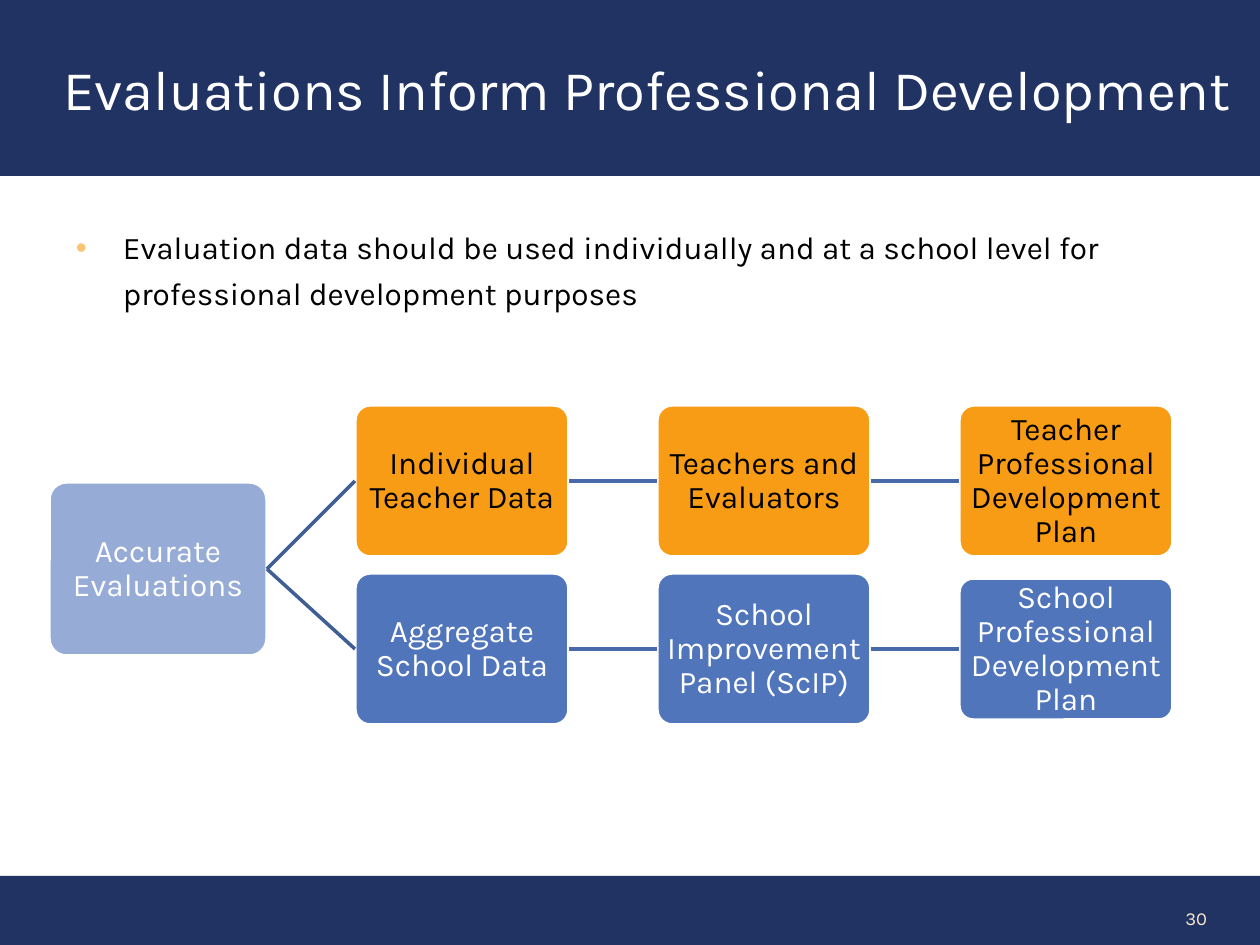
from lxml.etree import SubElement
from pptx import Presentation
from pptx.dml.color import RGBColor
from pptx.enum.shapes import MSO_CONNECTOR, MSO_SHAPE
from pptx.enum.text import MSO_ANCHOR, MSO_AUTO_SIZE, PP_ALIGN
from pptx.oxml.ns import qn
from pptx.util import Emu, Pt

TITLE = "Evaluations Inform Professional Development"
POINT = ("Evaluation data should be used individually and at a school level "
         "for professional development purposes")
PAGE = "30"
ROOT = "Accurate Evaluations"
# fill, text colour, top, labels
ROWS = [
    ("F89C15", "000000", 405, ["Individual Teacher Data", "Teachers and Evaluators",
                               "Teacher Professional Development Plan"]),
    ("5075BB", "FFFFFF", 573, ["Aggregate School Data",
                               "School Improvement Panel (ScIP)",
                               "School Professional Development Plan"]),
]
SHORT = "School Professional Development Plan"  # this box is less tall

NAVY, WHITE = "213363", "FFFFFF"
LEFT, STEP, WIDE, HIGH = 355, 302, 214, 152


def px(n):
    return Emu(round(n * 914400 / 126))


def rgb(code):
    return RGBColor.from_string(code)


def paint(shape, fill, line=None):
    shape.shadow.inherit = False
    shape.fill.solid()
    shape.fill.fore_color.rgb = rgb(fill)
    if line:
        shape.line.color.rgb = rgb(line)
        shape.line.width = Pt(2)
    else:
        shape.line.fill.background()


def write(shape, text, size, color, align, space=1.0, pad=None, bullet=None):
    """Fill a shape with one paragraph; pad is left, top, right, bottom in px."""
    frame = shape.text_frame
    look = {"word_wrap": True, "auto_size": MSO_AUTO_SIZE.NONE,
            "vertical_anchor": MSO_ANCHOR.MIDDLE}
    sides = ("margin_left", "margin_top", "margin_right", "margin_bottom")
    look.update(zip(sides, map(px, pad or (13, 6, 13, 6))))
    for key, val in look.items():
        setattr(frame, key, val)
    frame.text = text
    para = frame.paragraphs[0]
    para.alignment, para.line_spacing = align, space
    if bullet:
        props = para._p.get_or_add_pPr()
        props.set("marL", str(px(47)))
        props.set("indent", str(-px(47)))
        SubElement(SubElement(props, qn("a:buClr")), qn("a:srgbClr"), val=bullet)
        SubElement(props, qn("a:buFont"), typeface="Arial")
        SubElement(props, qn("a:buChar"), char="•")
    font = para.runs[0].font
    for key, val in {"name": "Karla", "size": Pt(size), "bold": False}.items():
        setattr(font, key, val)
    font.color.rgb = rgb(color)


def add_box(shapes, text, spot, fill, color):
    box = shapes.add_shape(MSO_SHAPE.ROUNDED_RECTANGLE, *map(px, spot))
    box.adjustments[0] = 0.1
    paint(box, fill, WHITE)
    write(box, text, 18, color, PP_ALIGN.CENTER, 0.9, (1, 1, 1, 1))
    return box


def join(shapes, start, end, color):
    line = shapes.add_connector(MSO_CONNECTOR.STRAIGHT, 0, 0, 0, 0)
    line.begin_connect(start, 3)
    line.end_connect(end, 1)
    line.line.color.rgb = rgb(color)
    line.line.width = Pt(2)
    SubElement(line._element.spPr, qn("a:effectLst"))


def main():
    deck = Presentation()
    deck.slide_width, deck.slide_height = px(1260), px(945)
    shapes = deck.slides.add_slide(deck.slide_layouts[5]).shapes

    title = shapes.title
    title.left, title.top, title.width, title.height = map(px, (0, 0, 1260, 176))
    title.fill.solid()
    title.fill.fore_color.rgb = rgb(NAVY)
    write(title, TITLE, 32, WHITE, PP_ALIGN.LEFT, pad=(63, 6, 13, 6))

    foot = shapes.add_shape(MSO_SHAPE.RECTANGLE, *map(px, (0, 876, 1260, 69)))
    paint(foot, NAVY)
    num = shapes.add_textbox(*map(px, (1036, 893, 184, 50)))
    write(num, PAGE, 10.5, "FEEBD0", PP_ALIGN.RIGHT)

    body = shapes.add_textbox(*map(px, (63, 215, 1134, 101)))
    write(body, POINT, 18, "000000", PP_ALIGN.LEFT, 1.2, bullet="FBC473")
    body.text_frame.vertical_anchor = MSO_ANCHOR.TOP

    root = add_box(shapes, ROOT, (49, 482, 218, 174), "96ACD6", WHITE)
    for fill, color, top, labels in ROWS:
        last = root
        for col, text in enumerate(labels):
            trim = 5 if text == SHORT else 0
            spot = (LEFT + col * STEP, top + trim, WIDE, HIGH - 2 * trim)
            box = add_box(shapes, text, spot, fill, color)
            join(shapes, last, box, "496AAA" if col else "405E96")
            last = box

    deck.save("out.pptx")


if __name__ == "__main__":
    main()
